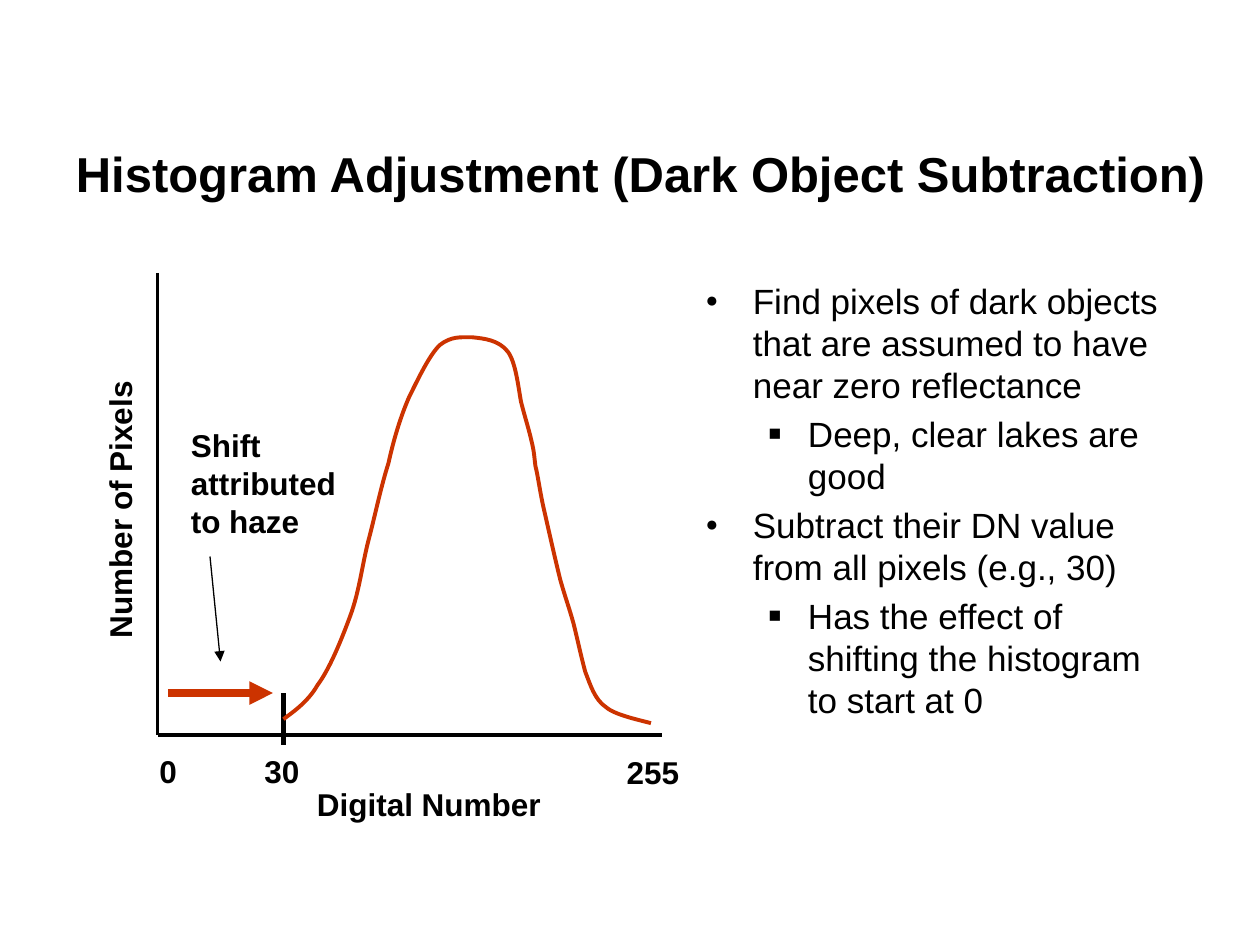
from dataclasses import dataclass

from lxml import etree
from pptx import Presentation
from pptx import util as u
from pptx.dml.color import RGBColor
from pptx.enum import shapes, text
from pptx.oxml import ns


@dataclass(frozen=True)
class Theme:
    font: str = "Arial"
    ink: RGBColor = RGBColor(0x00, 0x00, 0x00)
    accent: RGBColor = RGBColor(0xCC, 0x33, 0x00)
    title: int = 28
    body: int = 20
    label: int = 18


theme = Theme()
PX = 9525

deck = Presentation()
deck.slide_width, deck.slide_height = 960 * PX, 720 * PX
page = deck.slides.add_slide(deck.slide_layouts[1])


def place(box, left, top, width, height):
    box.left, box.top, box.width, box.height = (n * PX for n in (left, top, width, height))


def style(para, size, bold):
    for span in para.runs:
        span.font.name = theme.font
        span.font.size = u.Pt(size)
        span.font.bold = bold
        span.font.color.rgb = theme.ink


title = page.shapes.title
place(title, 40, 72, 896, 120)
title.text_frame.text = "Histogram Adjustment (Dark Object Subtraction)"
title.text_frame.auto_size = text.MSO_AUTO_SIZE.NONE
title.text_frame.vertical_anchor = text.MSO_ANCHOR.MIDDLE
title.text_frame.paragraphs[0].alignment = text.PP_ALIGN.CENTER
style(title.text_frame.paragraphs[0], theme.title, True)

points = [
    (0, "Find pixels of dark objects that are assumed to have near zero reflectance"),
    (1, "Deep, clear lakes are good"),
    (0, "Subtract their DN value from all pixels (e.g., 30)"),
    (1, "Has the effect of shifting the histogram to start at 0"),
]
bullets = [("●", 36, -36), ("■", 78, -30)]
body = page.placeholders[1]
place(body, 528, 208, 376, 448)
body.text_frame.text = "\n".join(words for level, words in points)
body.text_frame.auto_size = text.MSO_AUTO_SIZE.NONE
for index, (para, (level, words)) in enumerate(zip(body.text_frame.paragraphs, points)):
    symbol, margin, indent = bullets[level]
    para.level = level
    para.space_before = u.Pt(4 if index else 0)
    props = para._p.get_or_add_pPr()
    props.set("marL", str(margin * PX))
    props.set("indent", str(indent * PX))
    etree.SubElement(props, ns.qn("a:buSzPct"), val="60000")
    etree.SubElement(props, ns.qn("a:buFont"), typeface=theme.font)
    etree.SubElement(props, ns.qn("a:buChar"), char=symbol)
    style(para, theme.body, False)

lines = [
    (120, 560, 504, 560, theme.ink, 2.25, False),
    (120, 208, 120, 560, theme.ink, 2.25, False),
    (216, 528, 216, 568, theme.ink, 3, False),
    (128, 528, 208, 528, theme.accent, 4.5, True),
    (160, 424, 168, 504, theme.ink, 0.75, True),
]
for x1, y1, x2, y2, color, weight, arrow in lines:
    line = page.shapes.add_connector(
        shapes.MSO_CONNECTOR.STRAIGHT, x1 * PX, y1 * PX, x2 * PX, y2 * PX)
    line.line.color.rgb = color
    line.line.width = u.Pt(weight)
    if arrow:
        etree.SubElement(line.line._get_or_add_ln(), ns.qn("a:tailEnd"), type="triangle")
    etree.SubElement(line._element.spPr, ns.qn("a:effectLst"))

curve_points = [
    (221, 544), (234, 536), (242, 522), (251, 510), (260, 488), (267, 469),
    (274, 450), (276, 430), (281, 411), (286, 392), (290, 372), (296, 353),
    (300, 335), (305, 318), (312, 302), (319, 288), (327, 271), (335, 263),
    (344, 256), (351, 257), (360, 257), (369, 258), (380, 259), (387, 268),
    (393, 276), (395, 295), (397, 306), (400, 318), (403, 327), (405, 336),
    (407, 344), (407, 347), (408, 355), (410, 363), (411, 372), (414, 386),
    (417, 399), (423, 426), (427, 442), (431, 456), (434, 464), (437, 475),
    (440, 487), (443, 501), (446, 512), (450, 522), (453, 533), (462, 539),
    (469, 545), (489, 549), (496, 551),
]
builder = page.shapes.build_freeform(216, 548, scale=PX)
builder.add_line_segments(curve_points, close=False)
curve = builder.convert_to_shape()
curve.shadow.inherit = False
curve.fill.background()
curve.line.color.rgb = theme.accent
curve.line.width = u.Pt(2.25)
outline = curve._element.find(".//" + ns.qn("a:path"))
segments = outline.findall(ns.qn("a:lnTo"))
for start in range(0, len(segments), 3):
    bezier = etree.SubElement(outline, ns.qn("a:cubicBezTo"))
    for segment in segments[start:start + 3]:
        bezier.append(segment[0])
        outline.remove(segment)

labels = [
    ("0", 112, 568, 33, 38, False, 0),
    ("30", 192, 568, 46, 38, False, 0),
    ("255", 468, 569, 60, 38, False, 0),
    ("Digital Number", 232, 593, 190, 38, False, 0),
    ("Shift attributed to haze", 136, 320, 152, 96, True, 0),
    ("Number of Pixels", -25, 361, 232, 38, True, 270),
]
for words, left, top, width, height, wrap, turn in labels:
    box = page.shapes.add_textbox(left * PX, top * PX, width * PX, height * PX)
    box.rotation = turn
    box.text_frame.text = words
    box.text_frame.word_wrap = wrap
    box.text_frame.auto_size = text.MSO_AUTO_SIZE.SHAPE_TO_FIT_TEXT
    style(box.text_frame.paragraphs[0], theme.label, True)

deck.save("out.pptx")
